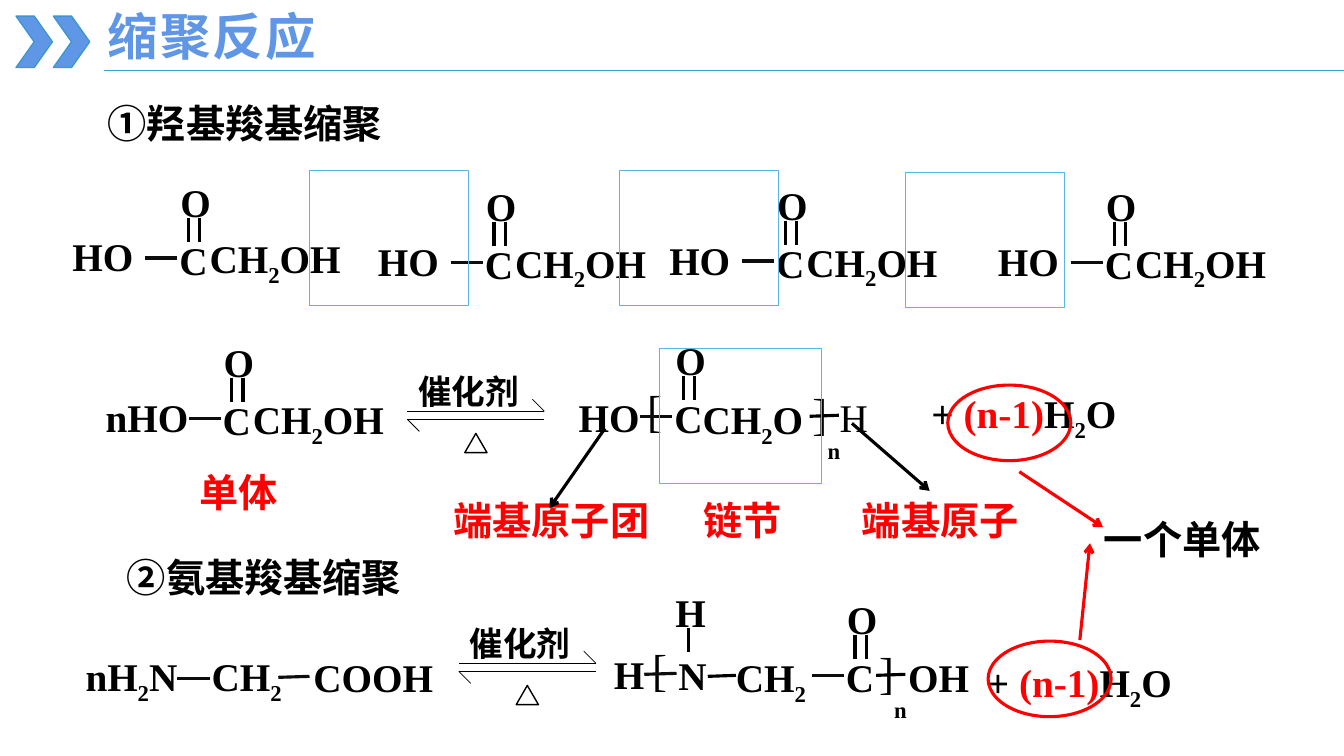
from lxml.etree import SubElement
from pptx import Presentation
from pptx.dml.color import RGBColor
from pptx.enum.shapes import MSO_CONNECTOR, MSO_SHAPE
from pptx.enum.text import MSO_ANCHOR, MSO_AUTO_SIZE, PP_ALIGN
from pptx.oxml.ns import qn
from pptx.util import Cm, Pt

BLACK, INK, RED = "000000", "0D0D0D", "FF0000"
BLUE, EDGE, RULE, FRAME = "6096E6", "3B96D3", "3DA1D2", "58B6E5"
HAN, ROMAN = "Noto Sans CJK SC", "Times New Roman"
LOW = ("2", "n")  # runs set as subscripts
COUNT = "(n-1)"  # run set in red


def size(inch):
    return Cm(inch * 2.54)


def paint(code):
    return RGBColor.from_string(code)


class Board:
    """Holds the slide and the style; places are in inches."""

    def __init__(self, slide):
        self.slide = slide
        self.shapes = slide.shapes

    def fill_text(self, box, parts, font, points, color, bold=True, space=0):
        frame = box.text_frame
        frame.word_wrap = False
        frame.auto_size = MSO_AUTO_SIZE.NONE
        frame.vertical_anchor = MSO_ANCHOR.TOP
        line = frame.paragraphs[0]
        line.alignment = PP_ALIGN.LEFT
        line.font.size = Pt(points)
        line.font.bold = bold
        line.font.color.rgb = paint(color)
        line.font.name = font
        base = line._p.pPr.find(qn("a:defRPr"))
        SubElement(base, qn("a:ea")).set("typeface", font)
        if space:
            base.set("spc", str(space))
        for part in parts:
            run = line.add_run()
            run.text = part
            if part in LOW:
                run._r.get_or_add_rPr().set("baseline", "-25000")
            elif part == COUNT:
                run.font.color.rgb = paint(RED)

    def title(self, x, y, w, h, text):
        box = self.shapes.title
        box.left, box.top, box.width, box.height = map(size, (x, y, w, h))
        self.fill_text(box, [text], HAN, 36, BLUE, space=150)

    def text(self, x, y, w, *parts, font=ROMAN, points=28, color=BLACK, bold=True):
        box = self.shapes.add_textbox(*map(size, (x, y, w, points / 49)))
        self.fill_text(box, parts, font, points, color, bold)

    def label(self, x, y, w, text, color=BLACK, points=28):
        self.text(x, y, w, text, font=HAN, points=points, color=color)

    def line(self, x1, y1, x2, y2, color=BLACK, width=2.25, arrow=False):
        line = self.shapes.add_connector(
            MSO_CONNECTOR.STRAIGHT, *map(size, (x1, y1, x2, y2)))
        line.line.color.rgb = paint(color)
        line.line.width = Pt(width)
        if arrow:
            SubElement(line.line._get_or_add_ln(), qn("a:tailEnd")).set("type", "arrow")
        SubElement(line._element.spPr, qn("a:effectLst"))

    def shape(self, kind, x, y, w, h, edge, width, fill=None):
        shape = self.shapes.add_shape(kind, *map(size, (x, y, w, h)))
        shape.shadow.inherit = False
        if fill:
            shape.fill.solid()
            shape.fill.fore_color.rgb = paint(fill)
        else:
            shape.fill.background()
        shape.line.color.rgb = paint(edge)
        shape.line.width = Pt(width)

    def acyl(self, x, y):
        """Carbon with a bond to its left and a double-bonded oxygen above."""
        self.line(x - 0.24, y + 0.27, x + 0.08, y + 0.27, INK)
        for step in (0.19, 0.3):
            self.line(x + step, y - 0.13, x + step, y + 0.11)
        self.text(x + 0.01, y - 0.57, 0.51, "O")
        self.text(x, y, 0.48, "C")

    def acid(self, x, y, head="HO", back=1.06):
        self.text(x - back, y - 0.03, 1.1, head)
        self.acyl(x, y)
        self.text(x + 0.3, y - 0.01, 1.61, "CH", "2", "OH")

    def react(self, x, y):
        """Reversible arrow with catalyst above and heat below."""
        self.shape(MSO_SHAPE.ISOSCELES_TRIANGLE, x + 0.57, y + 0.22, 0.22, 0.19,
                   BLACK, 1, "FFFFFF")
        self.label(x + 0.01, y - 0.45, 1.4, "催化剂", points=24)
        for x1, y1, x2, y2 in ((0, 0, 1.36, 0), (1.36, 0, 1.24, -0.12),
                               (0, 0.08, 1.36, 0.08), (0.12, 0.2, 0, 0.08)):
            self.line(x + x1, y + y1, x + x2, y + y2, width=0.5)

    def unit(self, left, right, y):
        """Square brackets of a repeat unit, with its count n."""
        self.text(left, y, 0.51, "[", points=32, bold=False)
        self.text(right, y + 0.03, 0.51, "]", points=32, bold=False)
        self.line(right + 0.07, y + 0.38, right + 0.36, y + 0.37)
        self.text(right + 0.15, y + 0.27, 0.34, "n")

    def water(self, x, y):
        self.text(x, y, 2.15, "+ ", COUNT, "H", "2", "O")


def main():
    deck = Presentation()
    deck.slide_width, deck.slide_height = size(13.33), size(7.5)
    board = Board(deck.slides.add_slide(deck.slide_layouts[5]))

    # Header
    for x in (0.16, 0.53):
        board.shape(MSO_SHAPE.CHEVRON, x, 0.16, 0.36, 0.51, EDGE, 1, BLUE)
    board.line(1.03, 0.7, 13.33, 0.7, RULE, 0.5)
    board.title(0.97, 0, 2.75, 0.71, "缩聚反应")

    # Four hydroxy acids in a row
    board.label(0.97, 0.94, 3.85, "①羟基羧基缩聚")
    for x, y in ((1.68, 2.29), (4.71, 2.33), (7.6, 2.32), (10.86, 2.33)):
        board.acid(x, y)

    # First reaction
    board.acid(2.11, 3.88, "nHO", 1.16)
    board.react(4.04, 4.08)
    board.text(5.64, 3.85, 0.81, "HO")
    board.unit(6.32, 7.96, 3.75)
    board.acyl(6.59, 3.86)
    board.text(6.87, 3.87, 1.21, "CH", "2", "O")
    board.text(8.23, 3.85, 0.83, "H", bold=False)
    board.water(9.14, 3.81)

    # Red labels and their arrows
    for x, y, w, name in ((1.88, 4.6, 0.98, "单体"), (4.4, 4.87, 2.14, "端基原子团"),
                          (6.88, 4.87, 0.98, "链节"), (8.45, 4.87, 1.76, "端基原子")):
        board.label(x, y, w, name, RED)
    board.line(8.45, 4.2, 9.22, 4.87, arrow=True)
    board.line(6, 4.25, 5.45, 5.04, arrow=True)

    # Frames round the leaving groups and the repeat unit
    for x, y, w in ((6.54, 3.46, 1.61), (3.07, 1.69, 1.58),
                    (6.14, 1.69, 1.58), (8.98, 1.71, 1.58)):
        board.shape(MSO_SHAPE.RECTANGLE, x, y, w, 1.34, FRAME, 0.5)

    # Second reaction
    board.label(1.16, 5.44, 3.85, "②氨基羧基缩聚")
    board.text(0.75, 6.42, 1.13, "nH", "2", "N")
    board.line(1.76, 6.73, 2.08, 6.73, INK)
    board.text(2, 6.42, 1.01, "CH", "2")
    board.line(2.76, 6.72, 3.07, 6.71, INK)
    board.text(3.01, 6.43, 1.49, "COOH")
    board.react(4.55, 6.58)
    board.text(5.99, 6.4, 0.51, "H")
    board.unit(6.37, 8.62, 6.32)
    board.line(6.39, 6.69, 6.71, 6.68, INK)
    board.text(6.6, 5.79, 0.51, "H")
    board.line(6.83, 6.23, 6.83, 6.47)
    board.text(6.63, 6.41, 0.48, "N")
    board.line(7.02, 6.71, 7.3, 6.7)
    board.text(7.2, 6.43, 0.91, "CH", "2")
    board.acyl(8.29, 6.43)
    board.text(8.91, 6.43, 0.94, "OH")
    board.water(9.69, 6.48)

    # Water count linked to one monomer
    for x, y in ((9.4, 3.82), (9.8, 6.36)):
        board.shape(MSO_SHAPE.OVAL, x, y, 1.22, 0.75, RED, 2.25)
    board.line(10.11, 4.68, 10.94, 5.23, RED, arrow=True)
    board.line(10.71, 6.35, 10.81, 5.39, RED, arrow=True)
    board.label(10.85, 5.06, 1.85, "一个单体")

    deck.save("out.pptx")


if __name__ == "__main__":
    main()
